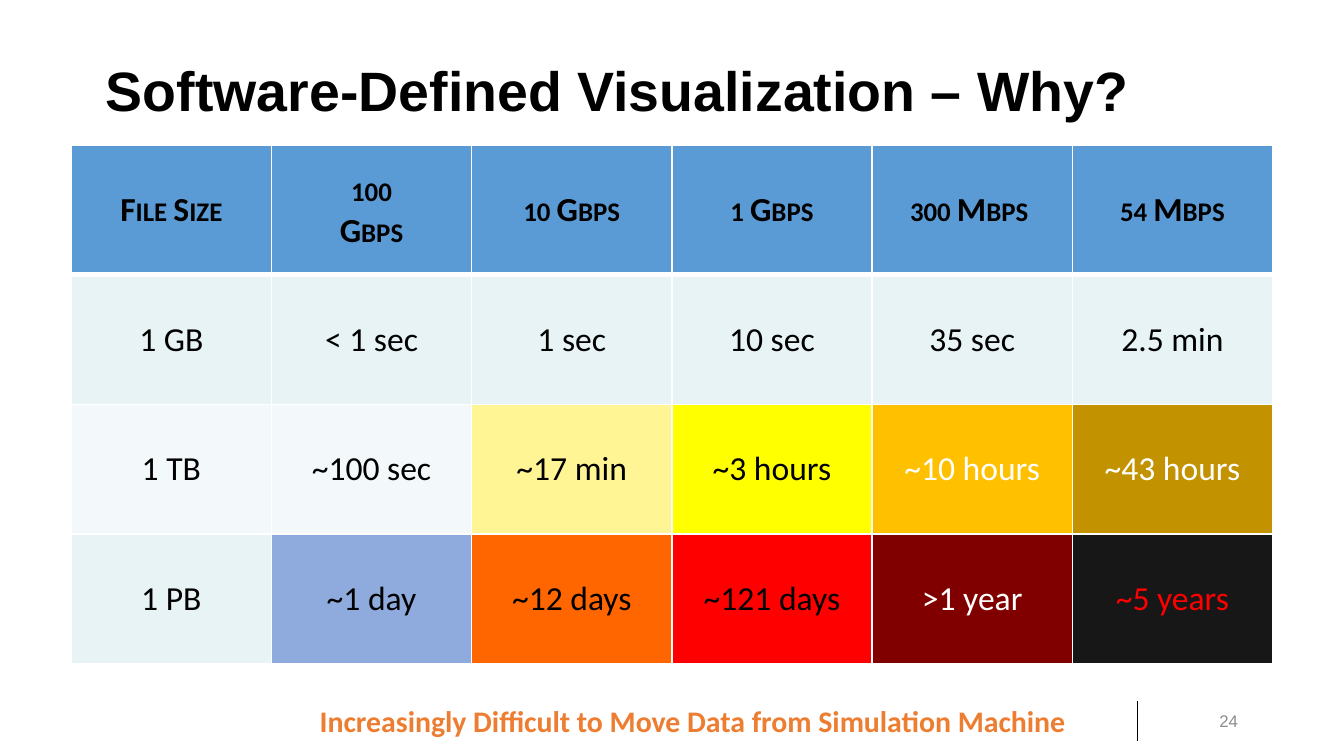
from dataclasses import dataclass

from lxml import etree
from pptx import Presentation
from pptx.dml.color import RGBColor
from pptx.enum.shapes import MSO_CONNECTOR
from pptx.enum.text import MSO_ANCHOR, PP_ALIGN
from pptx.oxml.ns import qn
from pptx.util import Pt

SCALE = 4572  # 200 px to the inch
STRAIGHT = MSO_CONNECTOR.STRAIGHT
TOP, MIDDLE = MSO_ANCHOR.TOP, MSO_ANCHOR.MIDDLE
LEFT, CENTER, RIGHT = PP_ALIGN.LEFT, PP_ALIGN.CENTER, PP_ALIGN.RIGHT

COLORS = {
    "black": "000000",
    "white": "FFFFFF",
    "gray": "8C8C8C",
    "orange": "ED7D31",
    "header": "5B9BD5",
    "band": "E7F3F4",
    "pale": "F3F9FA",
    "cream": "FFF595",
    "yellow": "FFFF00",
    "amber": "FFC000",
    "ochre": "C29201",
    "periwinkle": "8FAADC",
    "flame": "FF6600",
    "red": "FF0000",
    "maroon": "800000",
    "coal": "181717",
}


@dataclass
class Label:
    text: str
    left: int
    top: int
    width: int
    height: int
    font: str
    size: float
    color: str
    bold: bool = False
    align: PP_ALIGN = LEFT
    anchor: MSO_ANCHOR = MIDDLE
    spacing: float = 1.0


@dataclass
class Entry:
    text: str
    fill: str
    color: str = "black"


LABELS = [
    Label("Software-Defined Visualization – Why?", 138, 60, 1724, 158,
          "Arial", 29.7, "black", bold=True, spacing=0.9),
    Label("24", 1734, 1043, 128, 60, "Arial", 9, "gray", align=RIGHT),
    Label("Increasingly Difficult to Move Data from Simulation Machine",
          456, 1036, 1168, 74, "Calibri", 16, "orange", bold=True, anchor=TOP),
]

HEADINGS = ["File Size", "100\vGbps", "10 Gbps", "1 Gbps", "300 Mbps ", "54 Mbps"]
GIGABYTE = ["1 GB", "< 1 sec", "1 sec", "10 sec", "35 sec", "2.5 min"]
ROWS = [
    [Entry(text, "header") for text in HEADINGS],
    [Entry(text, "band") for text in GIGABYTE],
    [
        Entry("1 TB", "pale"),
        Entry("~100 sec", "pale"),
        Entry("~17 min", "cream"),
        Entry("~3 hours", "yellow"),
        Entry("~10 hours", "amber", "white"),
        Entry("~43 hours", "ochre", "white"),
    ],
    [
        Entry("1 PB", "band"),
        Entry("~1 day", "periwinkle"),
        Entry("~12 days", "flame"),
        Entry("~121 days", "red"),
        Entry(">1 year", "maroon", "white"),
        Entry("~5 years", "coal", "red"),
    ],
]


def px(length: int) -> int:
    return length * SCALE


def rgb(name: str) -> RGBColor:
    return RGBColor.from_string(COLORS[name])


def style_span(span, font: str, size: float, color: str, bold: bool) -> None:
    span.font.name = font
    span.font.size = Pt(size)
    span.font.bold = bold
    span.font.color.rgb = rgb(color)


def add_label(page, label: Label) -> None:
    box = page.shapes.add_textbox(
        px(label.left), px(label.top), px(label.width), px(label.height))
    frame = box.text_frame
    frame.word_wrap = True
    frame.vertical_anchor = label.anchor
    frame.text = label.text
    para = frame.paragraphs[0]
    para.alignment = label.align
    para.line_spacing = label.spacing
    style_span(para.runs[0], label.font, label.size, label.color, label.bold)


def add_borders(cell, widths: dict[str, int]) -> None:
    """Put white borders ahead of the fill, as the schema wants."""
    properties = cell._tc.get_or_add_tcPr()
    for index, (side, width) in enumerate(widths.items()):
        border = etree.Element(qn(f"a:ln{side}"), w=str(Pt(width)))
        fill = etree.SubElement(border, qn("a:solidFill"))
        etree.SubElement(fill, qn("a:srgbClr"), val=COLORS["white"])
        properties.insert(index, border)


def fill_cell(cell, entry: Entry, row: int) -> None:
    is_header = row == 0
    cell.fill.solid()
    cell.fill.fore_color.rgb = rgb(entry.fill)
    add_borders(cell, {"L": 1, "R": 1,
                       "T": 3 if row == 1 else 1,
                       "B": 3 if is_header else 1})
    cell.vertical_anchor = MIDDLE
    cell.margin_left = cell.margin_right = px(15)
    cell.margin_top = cell.margin_bottom = px(8)
    cell.text_frame.text = entry.text
    para = cell.text_frame.paragraphs[0]
    para.alignment = CENTER
    for span in para.runs:
        style_span(span, "Calibri", 18, entry.color, is_header)
        if is_header:
            span.font._element.set("cap", "small")


def add_transfer_table(page) -> None:
    table = page.shapes.add_table(
        len(ROWS), len(HEADINGS), px(106), px(216), px(1788), px(772)).table
    for row, entries in enumerate(ROWS):
        for column, entry in enumerate(entries):
            fill_cell(table.cell(row, column), entry, row)


def add_footer_rule(page) -> None:
    rule = page.shapes.add_connector(
        STRAIGHT, px(1692), px(1043), px(1692), px(1103))
    rule.line.color.rgb = rgb("black")
    rule.line.width = Pt(0.5)
    etree.SubElement(rule._element.spPr, qn("a:effectLst"))


def main() -> None:
    deck = Presentation()
    deck.slide_width, deck.slide_height = px(2000), px(1125)
    page = deck.slides.add_slide(deck.slide_layouts[6])
    add_footer_rule(page)
    add_transfer_table(page)
    for label in LABELS:
        add_label(page, label)
    deck.save("out.pptx")


if __name__ == "__main__":
    main()
